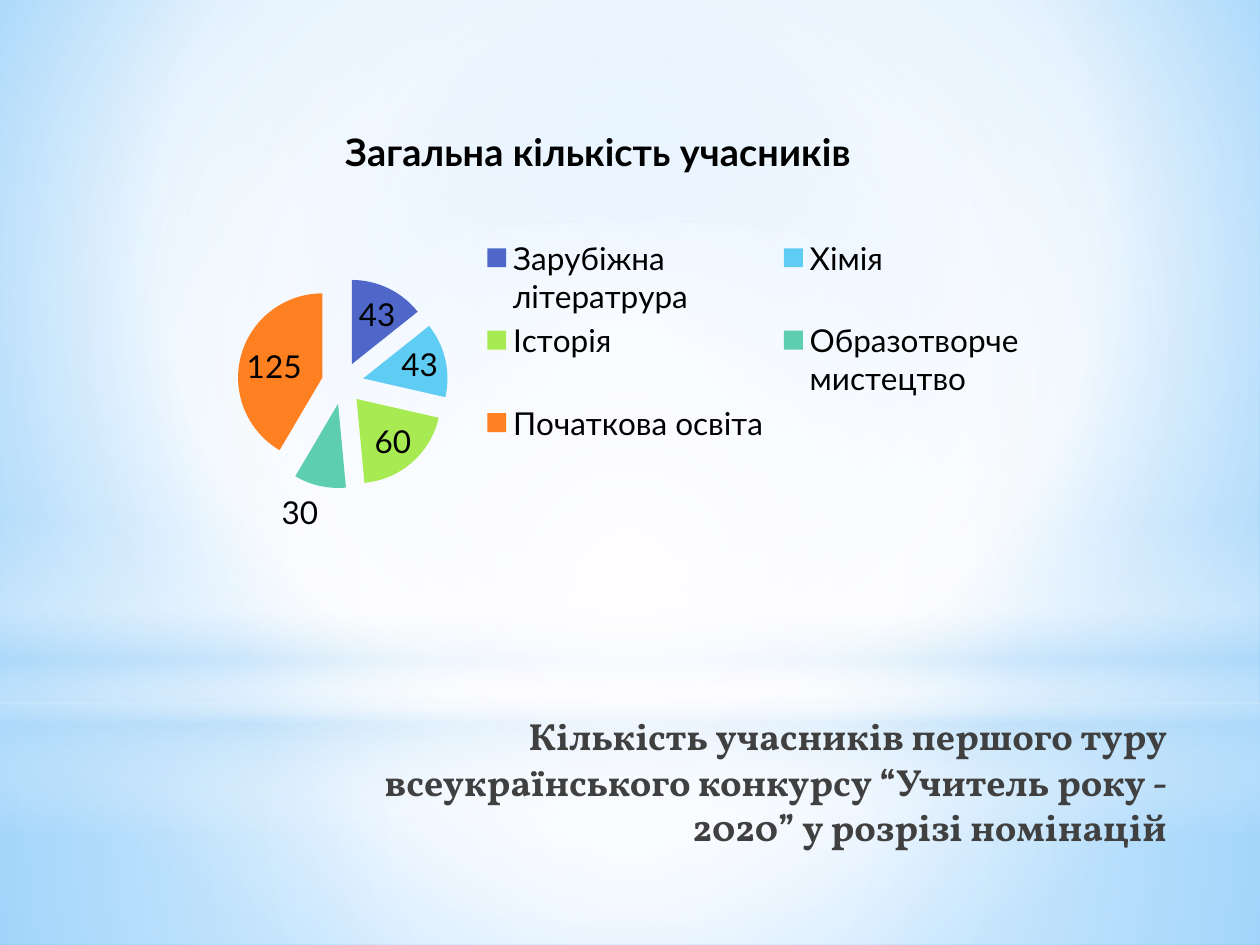
from lxml.etree import SubElement
from pptx import Presentation
from pptx.chart.data import CategoryChartData
from pptx.dml.color import RGBColor
from pptx.enum.chart import XL_CHART_TYPE, XL_LABEL_POSITION, XL_LEGEND_POSITION
from pptx.enum.shapes import MSO_SHAPE
from pptx.enum.text import MSO_ANCHOR, MSO_AUTO_SIZE, PP_ALIGN
from pptx.oxml.ns import qn
from pptx.util import Inches, Pt

WIDTH, HEIGHT = 10, 7.5
HORIZON = 5.58
COLORS = {
    "sky": "9ED5FF", "deep sky": "5BB9FF", "white": "FFFFFF",
    "glow": "FFFEFF", "haze": "B4DCFA", "heading": "404040", "chart text": "000000",
}
CENTER = (50, 50, 50, 50)
CHART_TITLE = "Загальна кількість учасників"
HEADING = ("Кількість учасників першого туру всеукраїнського конкурсу "
           "“Учитель року - 2020” у розрізі номінацій")
NOMINATIONS = [
    ("Зарубіжна літератрура", 43, "4E67C8"),
    ("Хімія", 43, "5ECCF3"),
    ("Історія", 60, "A7EA52"),
    ("Образотворче мистецтво", 30, "5DCEAF"),
    ("Початкова освіта", 125, "FF8021"),
]


def rgb(name):
    return RGBColor.from_string(COLORS[name])


def paint_gradient(fill, owner, stops, focus=None):
    """Fill with (position, colour, opacity) stops: radial around focus, or top to bottom."""
    fill.gradient()
    gradient = next(owner.iter(qn("a:gradFill")))
    for child in list(gradient):
        gradient.remove(child)
    stop_list = SubElement(gradient, qn("a:gsLst"))
    for position, color, opacity in stops:
        stop = SubElement(stop_list, qn("a:gs"), pos=str(position * 1000))
        tint = SubElement(stop, qn("a:srgbClr"), val=COLORS[color])
        if opacity < 100:
            SubElement(tint, qn("a:alpha"), val=str(opacity * 1000))
    if focus:
        radial = SubElement(gradient, qn("a:path"), path="circle")
        sides = {side: str(share * 1000) for side, share in zip("ltrb", focus)}
        SubElement(radial, qn("a:fillToRect"), **sides)
    else:
        SubElement(gradient, qn("a:lin"), ang="5400000", scaled="0")


def add_light(slide, outline, top, height, stops, focus=None):
    """Add a full-width translucent layer of light."""
    light = slide.shapes.add_shape(outline, 0, Inches(top), Inches(WIDTH), Inches(height))
    light.shadow.inherit = False
    light.line.fill.background()
    paint_gradient(light.fill, light._element, stops, focus)


def add_backdrop(slide):
    paint_gradient(slide.background.fill, slide._element,
                   [(0, "sky", 100), (60, "white", 100), (100, "deep sky", 100)],
                   (20, 10, 20, 60))
    add_light(slide, MSO_SHAPE.RECTANGLE, HORIZON, HEIGHT - HORIZON,
              [(0, "glow", 91), (37, "glow", 76), (100, "haze", 79)], CENTER)
    add_light(slide, MSO_SHAPE.RECTANGLE, 0, HORIZON,
              [(0, "glow", 89), (48, "glow", 62), (100, "haze", 79)], CENTER)
    add_light(slide, MSO_SHAPE.RECTANGLE, 4.12, 2.5,
              [(0, "glow", 0), (29, "glow", 30), (45, "haze", 40),
               (55, "glow", 26), (65, "haze", 60), (100, "glow", 0)])
    add_light(slide, MSO_SHAPE.OVAL, 1.75, HORIZON,
              [(0, "glow", 100), (56, "glow", 0)], CENTER)


def place_heading(slide):
    heading = slide.shapes.title
    slide.shapes._spTree.append(heading._element)  # bring in front of the backdrop
    heading.left, heading.top = Inches(2.24), Inches(5.25)
    heading.width, heading.height = Inches(7.12), Inches(1.25)
    frame = heading.text_frame
    frame.text = HEADING
    frame.word_wrap = True
    frame.auto_size = MSO_AUTO_SIZE.NONE
    frame.vertical_anchor = MSO_ANCHOR.TOP
    frame.margin_top = Inches(0.41)
    frame.margin_bottom = 0
    paragraph = frame.paragraphs[0]
    paragraph.alignment = PP_ALIGN.RIGHT
    paragraph.line_spacing = 1.0
    font = paragraph.font
    font.name, font.size, font.bold = "Vollkorn", Pt(21.6), True
    font.color.rgb = rgb("heading")


def set_plot_layout(plot_area, x, y, w, h):
    """Place the pie by shares of the chart's size."""
    for automatic in plot_area.findall(qn("c:layout")):
        plot_area.remove(automatic)
    layout = SubElement(plot_area, qn("c:layout"))
    plot_area.insert(0, layout)
    manual = SubElement(layout, qn("c:manualLayout"))
    SubElement(manual, qn("c:layoutTarget"), val="inner")
    for axis in "xy":
        SubElement(manual, qn(f"c:{axis}Mode"), val="edge")
    for key, share in zip("xywh", (x, y, w, h)):
        SubElement(manual, qn(f"c:{key}"), val=str(share))


def add_participants_chart(slide):
    data = CategoryChartData()
    data.categories = [name for name, _, _ in NOMINATIONS]
    data.add_series(CHART_TITLE, [count for _, count, _ in NOMINATIONS])
    chart = slide.shapes.add_chart(XL_CHART_TYPE.PIE, Inches(1.25), Inches(0.8),
                                   Inches(7), Inches(3.8), data).chart
    chart.font.name, chart.font.size = "Lato", Pt(18)
    chart.font.color.rgb = rgb("chart text")

    chart.has_title = True
    chart.chart_title.text_frame.text = CHART_TITLE
    title_font = chart.chart_title.text_frame.paragraphs[0].font
    title_font.name, title_font.size, title_font.bold = "Lato", Pt(21.6), True
    title_font.color.rgb = rgb("chart text")

    chart.has_legend = True
    chart.legend.position = XL_LEGEND_POSITION.RIGHT
    chart.legend.include_in_layout = False

    plot = chart.plots[0]
    plot.vary_by_categories = True
    set_plot_layout(plot._element.getparent(), 0.09, 0.37, 0.24, 0.44)
    series = plot.series[0]
    for index, (_, _, color) in enumerate(NOMINATIONS):
        slice_fill = series.points[index].format.fill
        slice_fill.solid()
        slice_fill.fore_color.rgb = RGBColor.from_string(color)
    first_point = series._element.find(qn("c:dPt"))
    explosion = SubElement(series._element, qn("c:explosion"), val="25")
    first_point.addprevious(explosion)

    plot.has_data_labels = True
    labels = plot.data_labels
    labels.show_value = True
    labels.show_percentage = False
    labels.position = XL_LABEL_POSITION.BEST_FIT


def main():
    presentation = Presentation()
    presentation.slide_width, presentation.slide_height = Inches(WIDTH), Inches(HEIGHT)
    slide = presentation.slides.add_slide(presentation.slide_layouts[5])
    add_backdrop(slide)
    place_heading(slide)
    add_participants_chart(slide)
    presentation.save("out.pptx")


if __name__ == "__main__":
    main()
